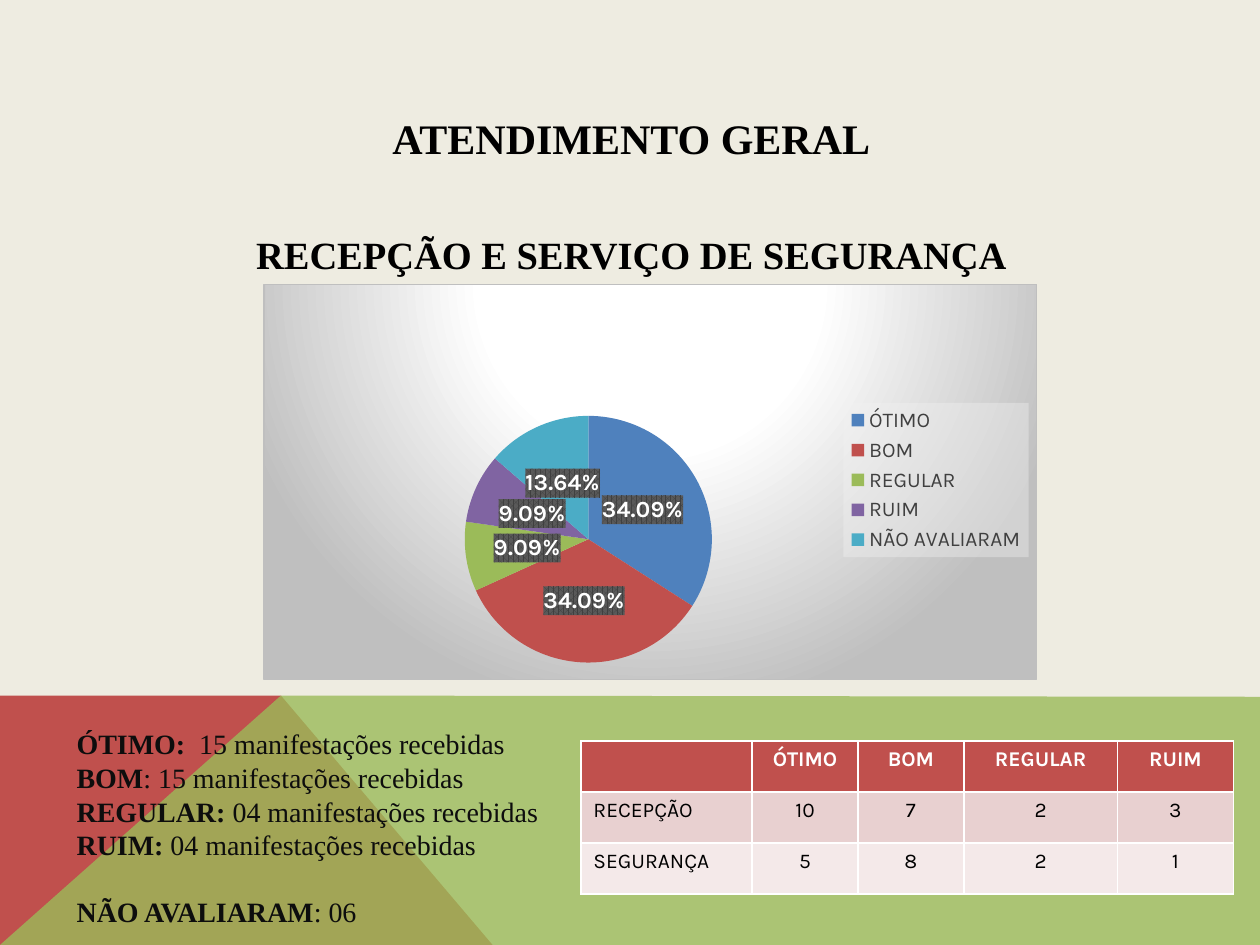
"""Build the slide on general service ratings for reception and security."""
from pptx import Presentation
from pptx.chart.data import CategoryChartData
from pptx.dml.color import RGBColor
from pptx.enum.chart import XL_CHART_TYPE, XL_LABEL_POSITION, XL_LEGEND_POSITION
from pptx.enum.text import PP_ALIGN
from pptx.oxml import parse_xml
from pptx.oxml.ns import nsdecls, qn
from pptx.util import Inches, Pt

PIE = XL_CHART_TYPE.PIE
LABEL_CENTER = XL_LABEL_POSITION.CENTER
LEGEND_RIGHT = XL_LEGEND_POSITION.RIGHT
LEFT, CENTER = PP_ALIGN.LEFT, PP_ALIGN.CENTER
SERIF, SANS = "Times New Roman", "Karla"

BANDS = [
    ([(0, 7.5), (0, 5.52), (2.23, 5.52), (3.91, 7.5)], "C0504D", None),
    ([(0, 7.5), (2.23, 5.52), (10, 5.53), (10, 7.5)], "9BBB59", 80),
]
HEADINGS = [("ATENDIMENTO GERAL", 24, 0), ("RECEPÇÃO E SERVIÇO DE SEGURANÇA", 22, 39)]
COUNTS = [
    ("ÓTIMO:  ", "15 manifestações recebidas", 0),
    ("BOM", ": 15 manifestações recebidas", 0),
    ("REGULAR: ", "04 manifestações recebidas", 0),
    ("RUIM: ", "04 manifestações recebidas", 0),
    ("NÃO AVALIARAM", ": 06", 19.2),
]
SHARES = [
    ("ÓTIMO", 34.09, "4F81BD"),
    ("BOM", 34.09, "C0504D"),
    ("REGULAR", 9.09, "9BBB59"),
    ("RUIM", 9.09, "8064A2"),
    ("NÃO AVALIARAM", 13.64, "4BACC6"),
]
TABLE_ROWS = [
    ("", "ÓTIMO", "BOM", "REGULAR", "RUIM"),
    ("RECEPÇÃO", "10", "7", "2", "3"),
    ("SEGURANÇA", "5", "8", "2", "1"),
]
COLUMN_WIDTHS = [1.36, 0.84, 0.84, 1.22, 0.92]
ROW_FILLS = ["C0504D", "E8D0D0", "F4E9E9"]
ROW_HEIGHT = 0.405

CHART_FILL = """<a:gradFill><a:gsLst>
<a:gs pos="0"><a:srgbClr val="FFFFFF"/></a:gs>
<a:gs pos="39000"><a:srgbClr val="FFFFFF"/></a:gs>
<a:gs pos="100000"><a:srgbClr val="BFBFBF"/></a:gs></a:gsLst>
<a:path path="circle"><a:fillToRect l="50000" t="-80000" r="50000" b="180000"/></a:path>
</a:gradFill><a:ln w="9525"><a:solidFill><a:srgbClr val="BFBFBF"/></a:solidFill></a:ln>"""
LEGEND_FILL = """<a:solidFill><a:srgbClr val="F2F2F2"><a:alpha val="39000"/></a:srgbClr></a:solidFill>"""
LABEL_FILL = """<a:pattFill prst="pct75"><a:fgClr><a:srgbClr val="404040"/></a:fgClr>
<a:bgClr><a:srgbClr val="595959"/></a:bgClr></a:pattFill>"""


def rgb(value):
    return RGBColor.from_string(value)


def style_font(font, size, color, name, bold=False):
    font.size, font.name, font.bold = Pt(size), name, bold
    font.color.rgb = rgb(color)


def write(paragraph, text, *, size, color="000000", name=SERIF, bold=False, align=LEFT, before=0):
    run = paragraph.add_run()
    run.text = text
    style_font(run.font, size, color, name, bold)
    paragraph.alignment = align
    paragraph.space_before = Pt(before)


def add_text_paragraphs(slide, box, count):
    frame = slide.shapes.add_textbox(*map(Inches, box)).text_frame
    frame.word_wrap = True
    return [frame.paragraphs[0]] + [frame.add_paragraph() for _ in range(count - 1)]


def add_band(slide, points, color, opacity):
    builder = slide.shapes.build_freeform(*map(Inches, points[0]))
    builder.add_line_segments([tuple(map(Inches, point)) for point in points[1:]], close=True)
    shape = builder.convert_to_shape()
    shape.shadow.inherit = False
    shape.fill.solid()
    shape.fill.fore_color.rgb = rgb(color)
    shape.line.fill.background()
    if opacity:
        color_element = shape.fill._xPr.find(".//" + qn("a:srgbClr"))
        color_element.append(parse_xml(f'<a:alpha {nsdecls("a")} val="{opacity * 1000}"/>'))


def add_chart_fill(previous, content):
    previous.addnext(parse_xml(f'<c:spPr {nsdecls("c", "a")}>{content}</c:spPr>'))


def chart_layout(left, top, width, height, inner=False):
    target = '<c:layoutTarget val="inner"/>' if inner else ""
    return parse_xml(
        f'<c:layout {nsdecls("c")}><c:manualLayout>{target}'
        '<c:xMode val="edge"/><c:yMode val="edge"/>'
        f'<c:x val="{left}"/><c:y val="{top}"/><c:w val="{width}"/><c:h val="{height}"/>'
        "</c:manualLayout></c:layout>")


def set_layout(parent, previous, layout):
    for old in parent.findall(qn("c:layout")):
        parent.remove(old)
    if previous is None:
        parent.insert(0, layout)
    else:
        previous.addnext(layout)


def add_share_chart(slide):
    data = CategoryChartData()
    data.categories = [name for name, _, _ in SHARES]
    data.add_series("Series 1", [value for _, value, _ in SHARES])
    box = map(Inches, (2.09, 2.25, 6.14, 3.15))
    chart = slide.shapes.add_chart(PIE, *box, data).chart
    chart.has_title = False
    style_font(chart.font, 10, "000000", SANS)

    plot = chart.plots[0]
    plot.vary_by_categories = True
    for index, (_, _, color) in enumerate(SHARES):
        fill = plot.series[0].points[index].format.fill
        fill.solid()
        fill.fore_color.rgb = rgb(color)

    plot.has_data_labels = True
    labels = plot.data_labels
    labels.show_percentage, labels.show_value = True, False
    labels.number_format, labels.number_format_is_linked = "0.00%", False
    labels.position = LABEL_CENTER
    style_font(labels.font, 13.3, "FFFFFF", SANS, True)

    chart.has_legend = True
    legend = chart.legend
    legend.position, legend.include_in_layout = LEGEND_RIGHT, False
    style_font(legend.font, 12, "404040", SANS)

    root = chart._chartSpace
    plot_area = root.find(".//" + qn("c:plotArea"))
    legend_element = root.find(".//" + qn("c:legend"))
    set_layout(plot_area, None, chart_layout(0.26, 0.33, 0.32, 0.63, inner=True))
    set_layout(legend_element, legend_element.find(qn("c:legendPos")),
               chart_layout(0.75, 0.3, 0.24, 0.39))
    add_chart_fill(root.find(qn("c:chart")), CHART_FILL)
    add_chart_fill(legend_element.find(qn("c:overlay")), LEGEND_FILL)
    add_chart_fill(root.find(".//" + qn("c:dLbls")).find(qn("c:numFmt")), LABEL_FILL)


def add_rating_table(slide):
    size = (sum(COLUMN_WIDTHS), ROW_HEIGHT * len(TABLE_ROWS))
    table = slide.shapes.add_table(len(TABLE_ROWS), len(COLUMN_WIDTHS),
                                   *map(Inches, (4.61, 5.88, *size))).table
    for column, width in zip(table.columns, COLUMN_WIDTHS):
        column.width = Inches(width)
    for row_index, (texts, fill) in enumerate(zip(TABLE_ROWS, ROW_FILLS)):
        header = row_index == 0
        for column_index, text in enumerate(texts):
            cell = table.cell(row_index, column_index)
            cell.fill.solid()
            cell.fill.fore_color.rgb = rgb(fill)
            if text:
                write(cell.text_frame.paragraphs[0], text, size=12, name=SANS, bold=header,
                      color="FFFFFF" if header else "000000",
                      align=CENTER if column_index else LEFT)


def main():
    presentation = Presentation()
    presentation.slide_width, presentation.slide_height = Inches(10), Inches(7.5)
    slide = presentation.slides.add_slide(presentation.slide_layouts[6])
    slide.background.fill.solid()
    slide.background.fill.fore_color.rgb = rgb("EEECE1")
    for band in BANDS:
        add_band(slide, *band)

    paragraphs = add_text_paragraphs(slide, (0.9, 0.84, 8.22, 4.28), len(HEADINGS))
    for paragraph, (text, size, before) in zip(paragraphs, HEADINGS):
        write(paragraph, text, size=size, bold=True, align=CENTER, before=before)
    add_share_chart(slide)

    paragraphs = add_text_paragraphs(slide, (0.51, 5.72, 4.25, 2.02), len(COUNTS))
    for paragraph, (label, value, before) in zip(paragraphs, COUNTS):
        paragraph.line_spacing = Pt(19.2)
        write(paragraph, label, size=16, color="0D0D0D", bold=True, before=before)
        write(paragraph, value, size=16, color="0D0D0D", before=before)
    add_rating_table(slide)
    presentation.save("out.pptx")


if __name__ == "__main__":
    main()
